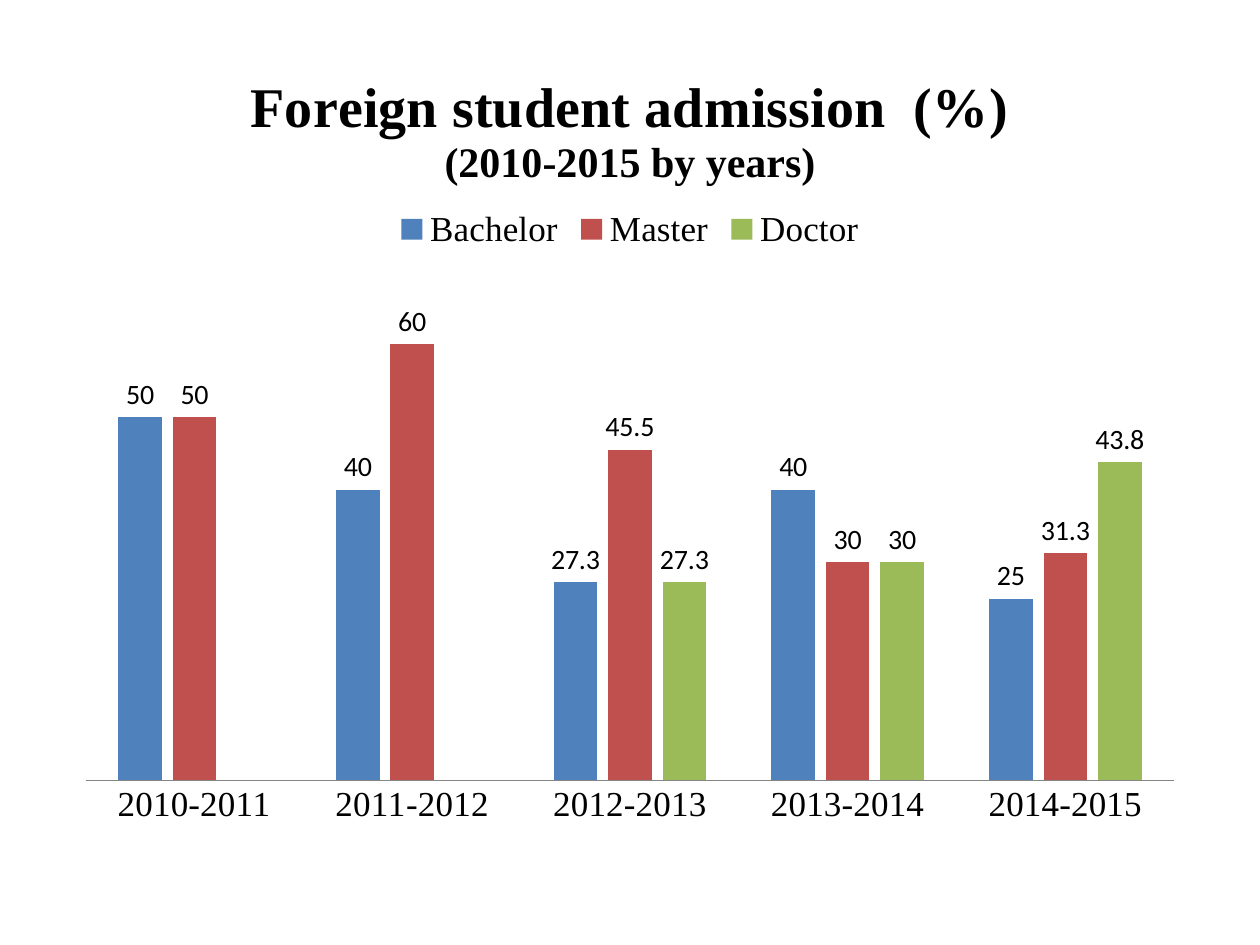
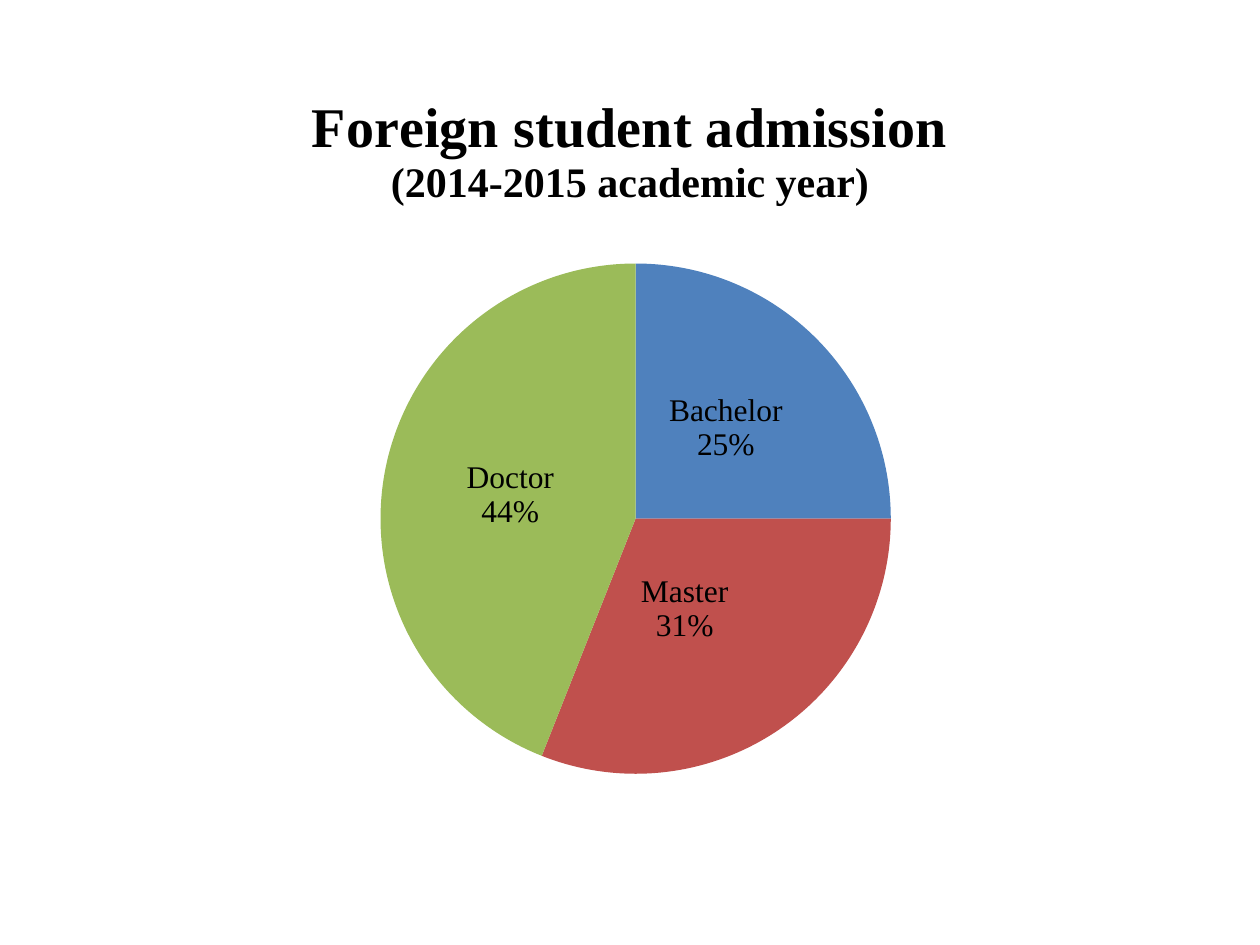
"""Build two chart slides on foreign student admission."""
import pptx
import pptx.chart.data
import pptx.dml.color
import pptx.enum.chart
import pptx.oxml
import pptx.oxml.ns
import pptx.util

CHART_TYPE = pptx.enum.chart.XL_CHART_TYPE
LABEL_POSITION = pptx.enum.chart.XL_LABEL_POSITION
SERIF, SANS = "Times New Roman", "Calibri"
BLACK, AXIS_GREY = "000000", "868686"
DEGREE_COLORS = {"Bachelor": "4F81BD", "Master": "C0504D", "Doctor": "9BBB59"}
TITLE_SIZES = (32, 24)
SLIDE_WIDTH, SLIDE_HEIGHT = 10, 7.5
MARGIN, CHART_BOTTOM = 0.5, 6.7

YEARS = {
    "title": ("Foreign student admission  (%)", "(2010-2015 by years)"),
    "top": 0.39,
    "plot": (0.02, 0.28, 0.96, 0.64),
    "categories": ("2010-2011", "2011-2012", "2012-2013", "2013-2014", "2014-2015"),
    "series": {
        "Bachelor": (50, 40, 27.3, 40, 25),
        "Master": (50, 60, 45.5, 30, 31.3),
        "Doctor": (None, None, 27.3, 30, 43.8),
    },
}
LATEST = {
    "title": ("Foreign student admission", "(2014-2015 academic year)"),
    "top": 0.55,
    "plot": (0.28, 0.25, 0.45, 0.66),
    "categories": tuple(DEGREE_COLORS),
    "series": {"Series 1": (25, 31, 44)},
}
MASTER_LABEL_SHIFT = (-0.02, -0.02)


def rgb(color):
    return pptx.dml.color.RGBColor.from_string(color)


def style_font(font, size, name=SERIF, bold=False):
    font.size, font.name, font.bold = pptx.util.Pt(size), name, bold
    font.color.rgb = rgb(BLACK)


def paint(part, color):
    part.format.fill.solid()
    part.format.fill.fore_color.rgb = rgb(color)


def manual_layout(position, inner=False):
    values = dict(zip("xywh", position))
    target = '<c:layoutTarget val="inner"/>' if inner else ""
    modes = '<c:xMode val="edge"/><c:yMode val="edge"/>' if inner else ""
    sizes = "".join(f'<c:{key} val="{value}"/>' for key, value in values.items())
    namespace = pptx.oxml.ns.nsdecls("c")
    return pptx.oxml.parse_xml(
        f"<c:layout {namespace}><c:manualLayout>{target}{modes}{sizes}"
        "</c:manualLayout></c:layout>")


def add_chart(presentation, content, chart_type):
    slide = presentation.slides.add_slide(presentation.slide_layouts[6])
    data = pptx.chart.data.CategoryChartData()
    data.categories = content["categories"]
    for name, values in content["series"].items():
        data.add_series(name, values)
    inches = pptx.util.Inches
    chart = slide.shapes.add_chart(
        chart_type, inches(MARGIN), inches(content["top"]),
        inches(SLIDE_WIDTH - 2 * MARGIN), inches(CHART_BOTTOM - content["top"]),
        data).chart
    style_font(chart.font, 10, SANS)
    text_frame = chart.chart_title.text_frame
    text_frame.text = "\n".join(content["title"])
    for paragraph, size in zip(text_frame.paragraphs, TITLE_SIZES):
        style_font(paragraph.runs[0].font, size, bold=True)
    chart.chart_title.include_in_layout = False
    plot_area = chart.element.find(".//" + pptx.oxml.ns.qn("c:plotArea"))
    for layout in plot_area.findall(pptx.oxml.ns.qn("c:layout")):
        plot_area.remove(layout)
    plot_area.insert(0, manual_layout(content["plot"], inner=True))
    chart.plots[0].has_data_labels = True
    return chart


def build_years(presentation):
    chart = add_chart(presentation, YEARS, CHART_TYPE.COLUMN_CLUSTERED)
    plot = chart.plots[0]
    plot.gap_width, plot.overlap, plot.vary_by_categories = 150, -25, False
    labels = plot.data_labels
    labels.show_value, labels.position = True, LABEL_POSITION.OUTSIDE_END
    style_font(labels.font, 16, SANS)
    for series in plot.series:
        paint(series, DEGREE_COLORS[series.name])
        series.invert_if_negative = False
    chart.has_legend = True
    chart.legend.position = pptx.enum.chart.XL_LEGEND_POSITION.TOP
    chart.legend.include_in_layout = False
    style_font(chart.legend.font, 20)
    years_axis, share_axis = chart.category_axis, chart.value_axis
    years_axis.major_tick_mark = pptx.enum.chart.XL_TICK_MARK.NONE
    years_axis.format.line.color.rgb = rgb(AXIS_GREY)
    style_font(years_axis.tick_labels.font, 20)
    share_axis.visible = share_axis.has_major_gridlines = False
    share_axis.minimum_scale, share_axis.maximum_scale = 0, 70


def build_latest(presentation):
    chart = add_chart(presentation, LATEST, CHART_TYPE.PIE)
    chart.has_legend = False
    plot = chart.plots[0]
    series = plot.series[0]
    for index, color in enumerate(DEGREE_COLORS.values()):
        paint(series.points[index], color)
    labels = series.data_labels
    labels.show_value = False
    labels.show_category_name = labels.show_percentage = True
    labels.number_format, labels.number_format_is_linked = "0%", False
    labels.position = LABEL_POSITION.CENTER
    style_font(labels.font, 18)
    master_label = series.points[LATEST["categories"].index("Master")].data_label
    style_font(master_label.font, 18)
    master_label.position = LABEL_POSITION.CENTER
    label_element = chart.element.find(".//" + pptx.oxml.ns.qn("c:dLbl"))
    label_element.insert(1, manual_layout(MASTER_LABEL_SHIFT))
    for tag, shown in (("showVal", "0"), ("showCatName", "1"), ("showPercent", "1")):
        label_element.find(pptx.oxml.ns.qn(f"c:{tag}")).set("val", shown)


def main():
    presentation = pptx.Presentation()
    presentation.slide_width = pptx.util.Inches(SLIDE_WIDTH)
    presentation.slide_height = pptx.util.Inches(SLIDE_HEIGHT)
    build_years(presentation)
    build_latest(presentation)
    presentation.save("out.pptx")


if __name__ == "__main__":
    main()
